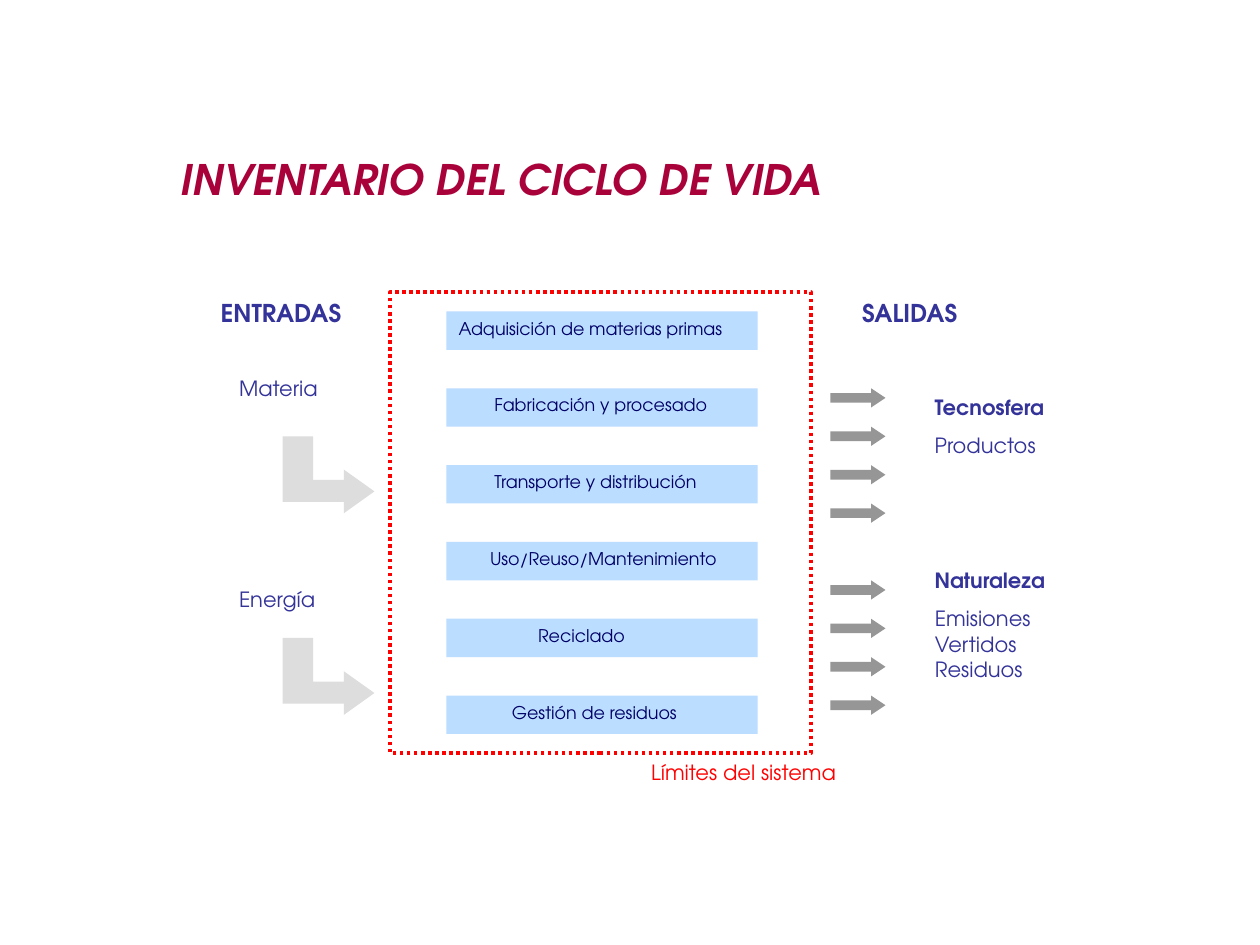
import pptx
import pptx.util
import pptx.dml.color
import pptx.enum.dml
import pptx.enum.shapes
import pptx.enum.text
from lxml import etree

Pt = pptx.util.Pt
RGB = pptx.dml.color.RGBColor.from_string
SHAPES = pptx.enum.shapes.MSO_SHAPE

THEME = {
    "font": "TeX Gyre Adventor",
    "title": "A90139", "label": "333399", "stage": "000066", "limit": "FF0000",
    "bar": "99CCFF", "elbow": "DDDDDD", "arrow": "969696",
    "title size": 24, "heading size": 14, "label size": 12, "stage size": 10,
}

TITLE = "INVENTARIO DEL CICLO DE VIDA"
# Stage name, left inset of its text
STAGES = [
    ("Adquisición de materias primas", 7),
    ("Fabricación y procesado", 27.5),
    ("Transporte y distribución", 27.5),
    ("Uso/Reuso/Mantenimiento", 25),
    ("Reciclado", 52.5),
    ("Gestión de residuos", 37.5),
]
# Text, left, grid row, width, size, colour, bold
LABELS = [
    ("ENTRADAS", 119, -0.5, 95, "heading size", "label", True),
    ("SALIDAS", 485.5, -0.5, 95, "heading size", "label", True),
    ("Materia", 129.5, 1.5, 63, "label size", "label", False),
    ("Energía", 129.5, 7, 63, "label size", "label", False),
    ("Tecnosfera", 527, 2, 94, "label size", "label", True),
    ("Productos", 527, 3, 84, "label size", "label", False),
    ("Naturaleza", 527, 6.5, 94, "label size", "label", True),
    ("Límites del sistema", 365, 11.5, 132, "label size", "limit", False),
]
EMISSIONS = ["Emisiones", "Vertidos", "Residuos"]
ARROW_ROWS = [2, 3, 4, 5, 7, 8, 9, 10]
ELBOW_ROWS = [3.25, 8.5]
ELBOW = [(52.5, 31.5), (35, 19), (35, 25), (17.5, 25), (17.5, 0),
         (0, 0), (0, 37.5), (35, 37.5), (35, 44)]

GRID_TOP, ROW = 178, 21.95


def row_top(row):
    return GRID_TOP + row * ROW


def place(shape, left, top, width, height):
    shape.left, shape.top = Pt(left), Pt(top)
    shape.width, shape.height = Pt(width), Pt(height)


def write(shape, lines, size, color, bold=False, italic=False):
    """Fill a shape with left-aligned lines set from its top."""
    frame = shape.text_frame
    frame.text = "\n".join(lines)
    frame.word_wrap = True
    frame.auto_size = pptx.enum.text.MSO_AUTO_SIZE.NONE
    frame.vertical_anchor = pptx.enum.text.MSO_ANCHOR.TOP
    for paragraph in frame.paragraphs:
        paragraph.alignment = pptx.enum.text.PP_ALIGN.LEFT
        paragraph.space_before = Pt(0)
        font = paragraph.font
        font.name, font.size = THEME["font"], Pt(THEME[size])
        font.bold, font.italic = bold, italic
        font.color.rgb = RGB(THEME[color])


def paint(shape, color):
    shape.shadow.inherit = False
    shape.fill.solid()
    shape.fill.fore_color.rgb = RGB(THEME[color])
    shape.line.fill.background()


def add_shape(slide, kind, left, row, width, height):
    return slide.shapes.add_shape(
        kind, Pt(left), Pt(row_top(row)), Pt(width), Pt(height))


def add_stage(slide, row, name, inset):
    bar = add_shape(slide, SHAPES.RECTANGLE, 255, row, 178, ROW)
    paint(bar, "bar")
    color = bar.fill._xPr.find(".//" + pptx.oxml.ns.qn("a:srgbClr"))
    etree.SubElement(color, pptx.oxml.ns.qn("a:alpha"), val="66000")
    write(bar, [name], "stage size", "stage")
    bar.text_frame.margin_left = Pt(inset)
    bar.text_frame.margin_right = 0


def add_limit_frame(slide):
    frame = add_shape(slide, SHAPES.RECTANGLE, 223, -0.5, 240.5, 12 * ROW)
    frame.shadow.inherit = False
    frame.fill.background()
    frame.line.color.rgb = RGB(THEME["limit"])
    frame.line.width = Pt(2)
    frame.line.dash_style = pptx.enum.dml.MSO_LINE.ROUND_DOT


def add_elbow(slide, row):
    points = [(Pt(161.5 + x), Pt(row_top(row) + y)) for x, y in ELBOW]
    builder = slide.shapes.build_freeform(*points[0])
    builder.add_line_segments(points[1:], close=True)
    paint(builder.convert_to_shape(), "elbow")


def add_output_arrow(slide, row):
    arrow = add_shape(slide, SHAPES.RIGHT_ARROW, 474.5, row, 31.5, 11)
    arrow.adjustments[0], arrow.adjustments[1] = 0.5, 0.75
    paint(arrow, "arrow")


def add_emissions(body):
    place(body, 527, row_top(7.5), 84, 3 * ROW)
    write(body, EMISSIONS, "label size", "label")
    for paragraph in body.text_frame.paragraphs:
        properties = paragraph._p.get_or_add_pPr()
        properties.set("marL", "0")
        properties.set("indent", "0")
        bullet = properties.makeelement(pptx.oxml.ns.qn("a:buNone"))
        properties.find(pptx.oxml.ns.qn("a:defRPr")).addprevious(bullet)


def main():
    presentation = pptx.Presentation()
    presentation.slide_width, presentation.slide_height = Pt(720), Pt(540)
    slide = presentation.slides.add_slide(presentation.slide_layouts[1])

    title = slide.shapes.title
    place(title, 96, 84, 468, 36)
    write(title, [TITLE], "title size", "title", bold=True, italic=True)

    for index, (name, inset) in enumerate(STAGES):
        add_stage(slide, 2 * index, name, inset)
    add_limit_frame(slide)
    for row in ELBOW_ROWS:
        add_elbow(slide, row)
    for row in ARROW_ROWS:
        add_output_arrow(slide, row)
    for text, left, row, width, size, color, bold in LABELS:
        box = slide.shapes.add_textbox(
            Pt(left), Pt(row_top(row)), Pt(width), Pt(33))
        write(box, [text], size, color, bold)
    add_emissions(slide.placeholders[1])

    presentation.save("out.pptx")


if __name__ == "__main__":
    main()
